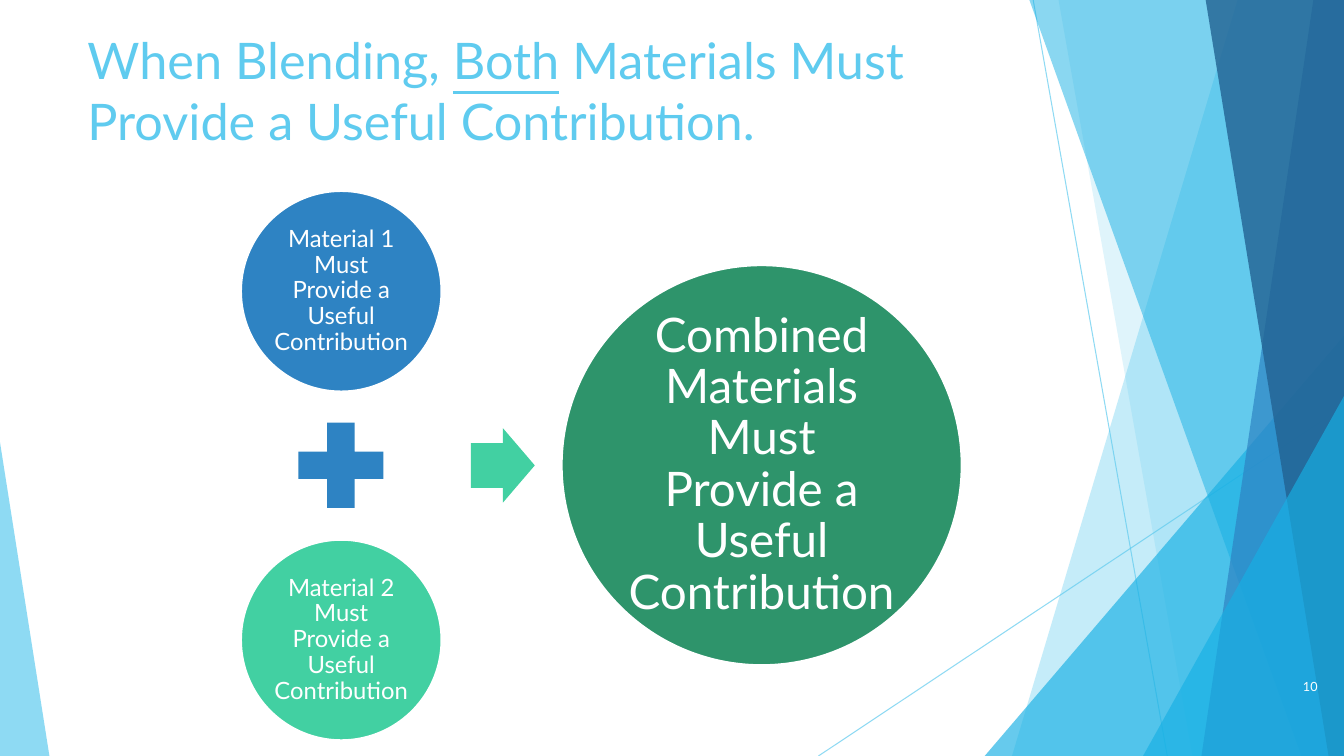
"""Build the slide on blending two materials into one useful combination."""
from lxml.etree import SubElement
from pptx import Presentation
from pptx.dml.color import RGBColor
from pptx.enum.shapes import MSO_CONNECTOR, MSO_SHAPE
from pptx.enum.text import MSO_ANCHOR as ANCHOR, PP_ALIGN as ALIGN
from pptx.oxml.ns import qn
from pptx.util import Pt

SKY = RGBColor(0x5F, 0xCB, 0xEF)
CYAN = RGBColor(0x17, 0xB0, 0xE4)
BLUE = RGBColor(0x2E, 0x83, 0xC3)
NAVY = RGBColor(0x22, 0x62, 0x92)
MINT = RGBColor(0x42, 0xD0, 0xA2)
GREEN = RGBColor(0x2E, 0x94, 0x6B)
WHITE = RGBColor(0xFF, 0xFF, 0xFF)
WIDTH, HEIGHT = 960, 540


def paint(fill, color, opacity=100):
    """Give a fill a solid colour and an opacity in percent."""
    fill.solid()
    fill.fore_color.rgb = color
    if opacity < 100:
        color_element = fill._xPr.find(qn("a:solidFill"))[0]
        SubElement(color_element, qn("a:alpha"), val=str(opacity * 1000))


def write(shape, runs, size, color, frame_format, paragraph_format):
    """Write (text, underline) runs as the shape's only paragraph."""
    frame = shape.text_frame
    for name, value in {"word_wrap": True, **frame_format}.items():
        setattr(frame, name, value)
    paragraph = frame.paragraphs[0]
    for name, value in paragraph_format.items():
        setattr(paragraph, name, value)
    for text, underline in runs:
        run = paragraph.add_run()
        run.text = text
        font_format = {"name": "Lato", "size": Pt(size), "underline": underline}
        for name, value in font_format.items():
            setattr(run.font, name, value)
        run.font.color.rgb = color


presentation = Presentation()
presentation.slide_width, presentation.slide_height = Pt(WIDTH), Pt(HEIGHT)
slide = presentation.slides.add_slide(presentation.slide_layouts[6])
shapes = slide.shapes

for ends in [(738, 0, 833.8, HEIGHT), (WIDTH, 290.2, 584.6, HEIGHT)]:
    connector = shapes.add_connector(MSO_CONNECTOR.STRAIGHT, *map(Pt, ends))
    connector.line.width = Pt(0.75)
    paint(connector.line.fill, SKY, 70)
    SubElement(connector._element.spPr, qn("a:effectLst"))

decorations = [
    ("panel", (884.2, 722.9), SKY, 36),
    ("panel", (756, 851.8), SKY, 20),
    ("triangle", (703.4, 239.8, WIDTH, 1), CYAN, 66),
    ("panel", (735.1, 929.5), CYAN, 50),
    ("panel", (938.2, 858.2), BLUE, 70),
    ("panel", (861.1, 949), NAVY, 80),
    ("triangle", (816.5, 283, WIDTH, 1), CYAN, 66),
    ("triangle", (0, 316, 35.3, 0), SKY, 70),
]
for kind, geometry, color, opacity in decorations:
    if kind == "panel":
        top_x, bottom_x = geometry
        builder = shapes.build_freeform(Pt(top_x), Pt(-0.6))
        corners = [(WIDTH, -0.6), (WIDTH, HEIGHT), (bottom_x, HEIGHT)]
        builder.add_line_segments([(Pt(x), Pt(y)) for x, y in corners])
        shape = builder.convert_to_shape()
    else:
        left, top, right, apex = geometry
        shape = shapes.add_shape(MSO_SHAPE.ISOSCELES_TRIANGLE, Pt(left), Pt(top),
                                 Pt(right - left), Pt(HEIGHT - top))
        shape.adjustments[0] = apex
    shape.shadow.inherit = False
    shape.line.fill.background()
    paint(shape.fill, color, opacity)

title = shapes.add_textbox(Pt(55.4), Pt(17.3), Pt(676.8), Pt(103.7))
title_runs = [("When Blending, ", False), ("Both", True),
              (" Materials Must Provide a Useful Contribution.", False)]
write(title, title_runs, 36, SKY, {"vertical_anchor": ANCHOR.TOP}, {"alignment": ALIGN.LEFT})

circles = [
    ("Material 1", 172.1, 136.4, 143.3, BLUE, 17, 2),
    ("Material 2", 172.1, 385.5, 143.3, MINT, 17, 2),
    ("Combined Materials", 401.2, 189.4, 285.8, GREEN, 34, 4),
]
for subject, left, top, diameter, color, size, inset in circles:
    circle = shapes.add_shape(MSO_SHAPE.OVAL, Pt(left), Pt(top), Pt(diameter), Pt(diameter))
    circle.shadow.inherit = False
    paint(circle.fill, color)
    paint(circle.line.fill, WHITE)
    circle.line.width = Pt(1.5)
    margins = {f"margin_{side}": Pt(inset) for side in ("left", "top", "right", "bottom")}
    write(circle, [(f"{subject} Must Provide a Useful Contribution", False)], size, WHITE,
          {"vertical_anchor": ANCHOR.MIDDLE, **margins},
          {"alignment": ALIGN.CENTER, "line_spacing": 0.9})

signs = [
    (MSO_SHAPE.MATH_PLUS, (202.1, 290.9, 82.8, 82.8), BLUE, []),
    (MSO_SHAPE.RIGHT_ARROW, (336.4, 305.8, 45.6, 53.3), MINT, [0.6, 0.5]),
]
for preset, box, color, adjustments in signs:
    sign = shapes.add_shape(preset, *map(Pt, box))
    sign.shadow.inherit = False
    sign.line.fill.background()
    paint(sign.fill, color)
    for index, value in enumerate(adjustments):
        sign.adjustments[index] = value

slide_number = shapes.add_textbox(Pt(894.2), Pt(475.9), Pt(54), Pt(28.8))
write(slide_number, [("10", False)], 9, WHITE,
      {"vertical_anchor": ANCHOR.MIDDLE}, {"alignment": ALIGN.RIGHT})

presentation.save("out.pptx")
